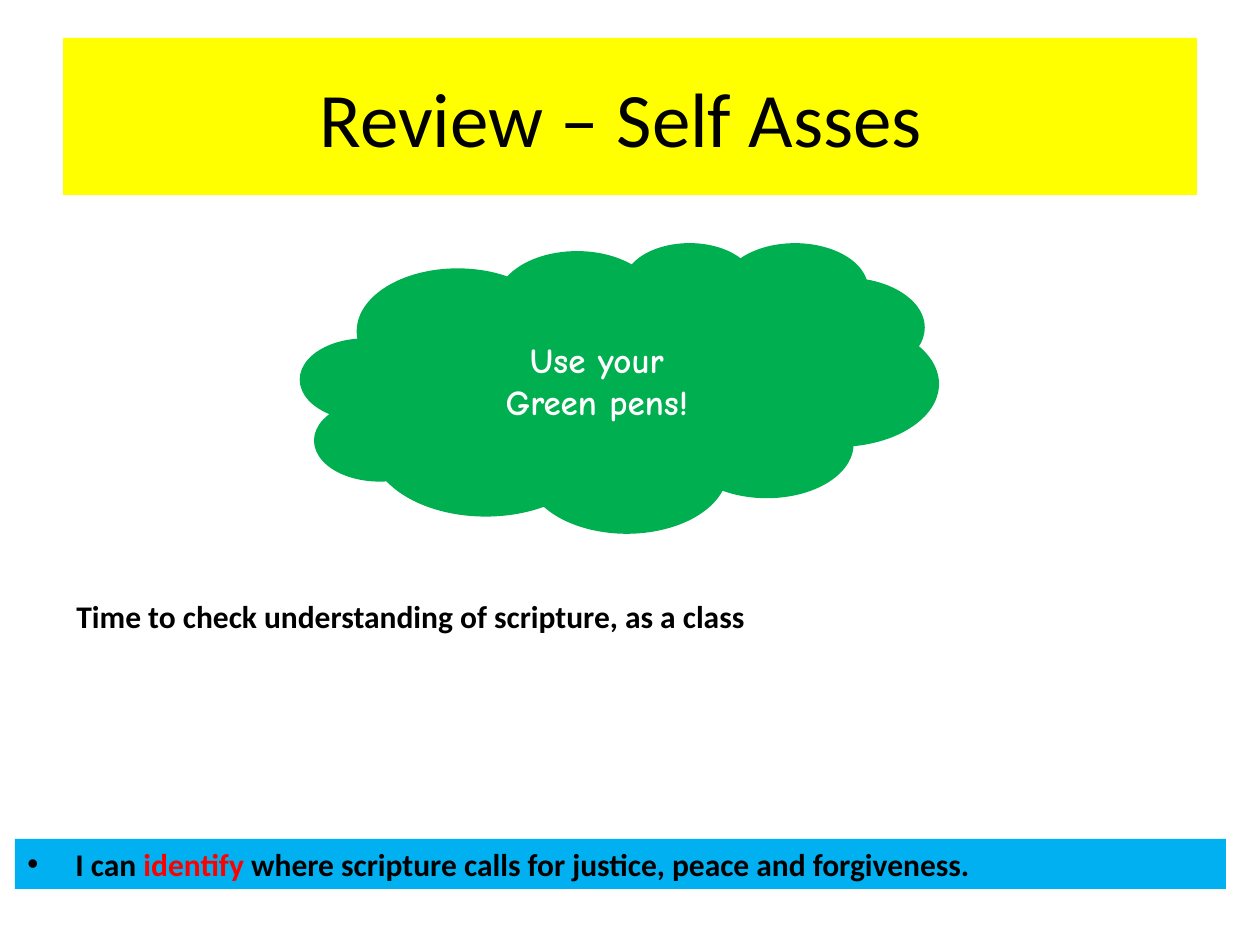
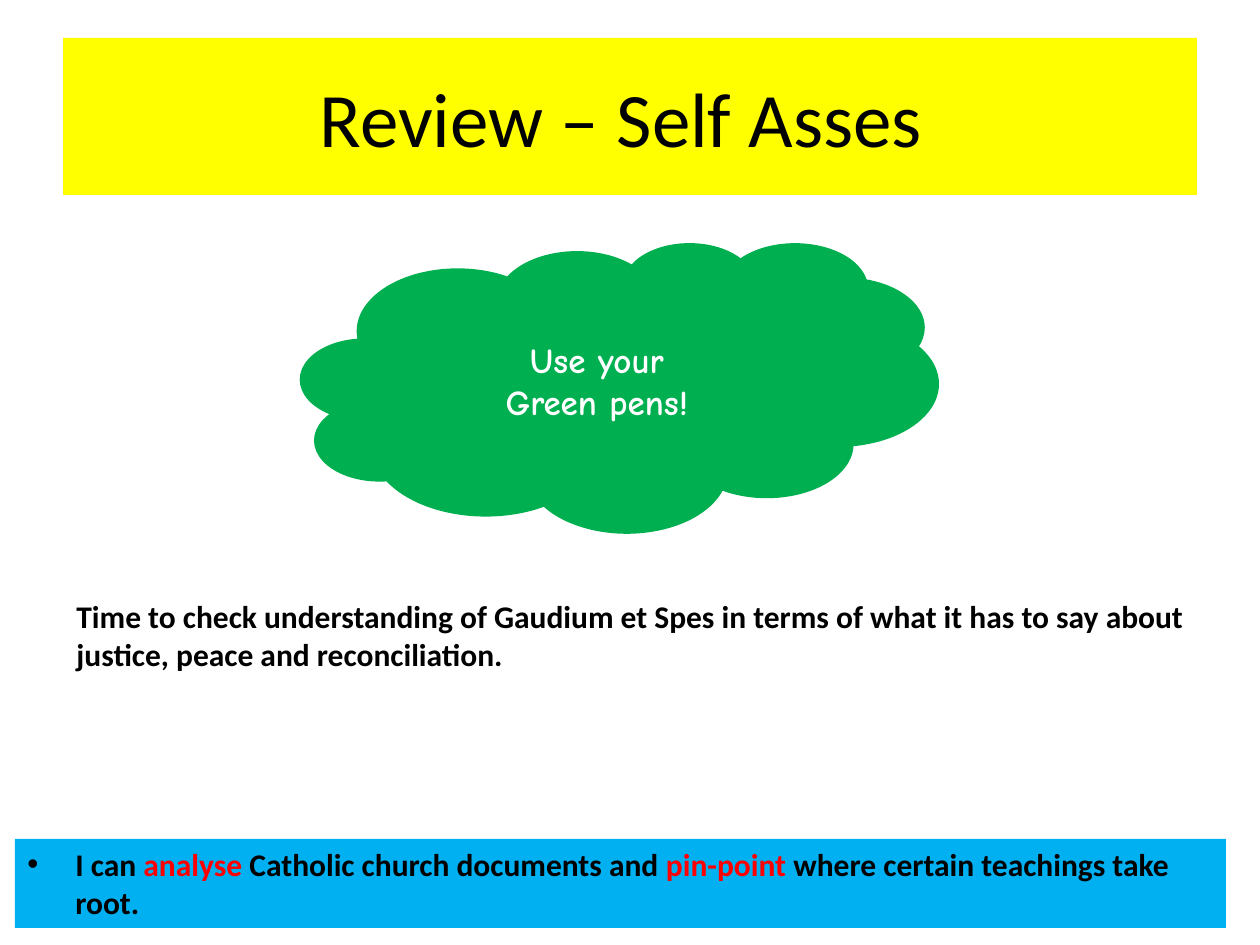
import dataclasses
import typing

import lxml.etree
import pptx
import pptx.dml.color
import pptx.enum.shapes
import pptx.enum.text
import pptx.oxml.ns
import pptx.util

PX = 914400 / 126  # EMU in one px
COLOURS = {
    "title_band": "FFFF00",
    "cloud": "00B050",
    "objective_band": "00B0F0",
    "text": "000000",
    "keyword": "FF0000",
    "cloud_text": "FFFFFF",
}
TITLE = "Review – Self Asses "
INDENT = 48
ALIGN = pptx.enum.text.PP_ALIGN
ANCHOR = pptx.enum.text.MSO_ANCHOR
AUTO_SIZE = pptx.enum.text.MSO_AUTO_SIZE
PRESET = pptx.enum.shapes.MSO_SHAPE


@dataclasses.dataclass
class Area:
    left: int
    top: int
    width: int
    height: int

    def emu(self) -> list[int]:
        return [to_emu(n) for n in dataclasses.astuple(self)]


@dataclasses.dataclass
class Review:
    task: str
    objective: list[tuple[str, str]]  # text and its colour name
    text_height: int


TITLE_AREA = Area(63, 38, 1134, 157)
CLOUD_AREA = Area(302, 244, 635, 287)

REVIEWS = [
    Review(
        "Time to check understanding of scripture, as a class",
        [
            ("I can ", "text"),
            ("identify", "keyword"),
            (" where scripture calls for justice, peace and forgiveness.", "text"),
        ],
        50,
    ),
    Review(
        "Time to check understanding of Gaudium et Spes in terms of what it "
        "has to say about justice, peace and reconciliation.",
        [
            ("I can ", "text"),
            ("analyse", "keyword"),
            (" Catholic church documents and ", "text"),
            ("pin-point ", "keyword"),
            ("where certain teachings take root.", "text"),
        ],
        89,
    ),
]


def to_emu(px: int) -> int:
    return round(px * PX)


def rgb(name: str) -> pptx.dml.color.RGBColor:
    return pptx.dml.color.RGBColor.from_string(COLOURS[name])


def add_span(para: typing.Any, text: str, *, size: int = 18, font: str = "Calibri",
             colour: str = "text", bold: bool = True) -> None:
    span = para.add_run()
    span.text = text
    span.font.size = pptx.util.Pt(size)
    span.font.name = font
    span.font.bold = bold
    span.font.color.rgb = rgb(colour)


def fill_shape(box: typing.Any, colour: str) -> None:
    box.fill.solid()
    box.fill.fore_color.rgb = rgb(colour)


def add_shape(page: typing.Any, preset: typing.Any, area: Area, colour: str) -> typing.Any:
    box = page.shapes.add_shape(preset, *area.emu())
    box.shadow.inherit = False
    fill_shape(box, colour)
    box.line.fill.background()
    return box


def add_bullet(para: typing.Any) -> None:
    properties = para._p.get_or_add_pPr()
    properties.set("marL", str(to_emu(INDENT)))
    properties.set("indent", str(-to_emu(INDENT)))
    for tag, key, value in (("a:buFont", "typeface", "Arial"), ("a:buChar", "char", "•")):
        lxml.etree.SubElement(properties, pptx.oxml.ns.qn(tag)).set(key, value)


def add_title(page: typing.Any) -> None:
    box = page.shapes.title
    box.left, box.top, box.width, box.height = TITLE_AREA.emu()
    fill_shape(box, "title_band")
    frame = box.text_frame
    frame.auto_size = AUTO_SIZE.NONE
    frame.vertical_anchor = ANCHOR.MIDDLE
    para = frame.paragraphs[0]
    para.alignment = ALIGN.CENTER
    add_span(para, TITLE, size=44, bold=False)


def add_cloud(page: typing.Any) -> None:
    box = add_shape(page, PRESET.CLOUD, CLOUD_AREA, "cloud")
    box.line.color.rgb = rgb("cloud")
    box.line.width = pptx.util.Pt(2)
    frame = box.text_frame
    frame.vertical_anchor = ANCHOR.MIDDLE
    for para, text in ((frame.paragraphs[0], "Use your"),
                       (frame.add_paragraph(), "Green pens!")):
        para.alignment = ALIGN.CENTER
        add_span(para, text, size=20, font="Comic Neue", colour="cloud_text")


def add_objective(page: typing.Any, review: Review) -> None:
    area = Area(15, 839, 1211, review.text_height)
    box = add_shape(page, PRESET.RECTANGLE, area, "objective_band")
    frame = box.text_frame
    frame.word_wrap = True
    frame.auto_size = AUTO_SIZE.SHAPE_TO_FIT_TEXT
    frame.vertical_anchor = ANCHOR.TOP
    para = frame.paragraphs[0]
    para.alignment = ALIGN.LEFT
    add_bullet(para)
    for text, colour in review.objective:
        add_span(para, text, colour=colour)


def add_task(page: typing.Any, review: Review) -> None:
    area = Area(64, 591, 1142, review.text_height)
    frame = page.shapes.add_textbox(*area.emu()).text_frame
    frame.word_wrap = True
    frame.auto_size = AUTO_SIZE.SHAPE_TO_FIT_TEXT
    add_span(frame.paragraphs[0], review.task)


def main() -> None:
    deck = pptx.Presentation()
    deck.slide_width = to_emu(1260)
    deck.slide_height = to_emu(945)
    title_only = deck.slide_layouts[5]
    for review in REVIEWS:
        page = deck.slides.add_slide(title_only)
        add_title(page)
        add_cloud(page)
        add_objective(page, review)
        add_task(page, review)
    deck.save("out.pptx")


if __name__ == "__main__":
    main()
